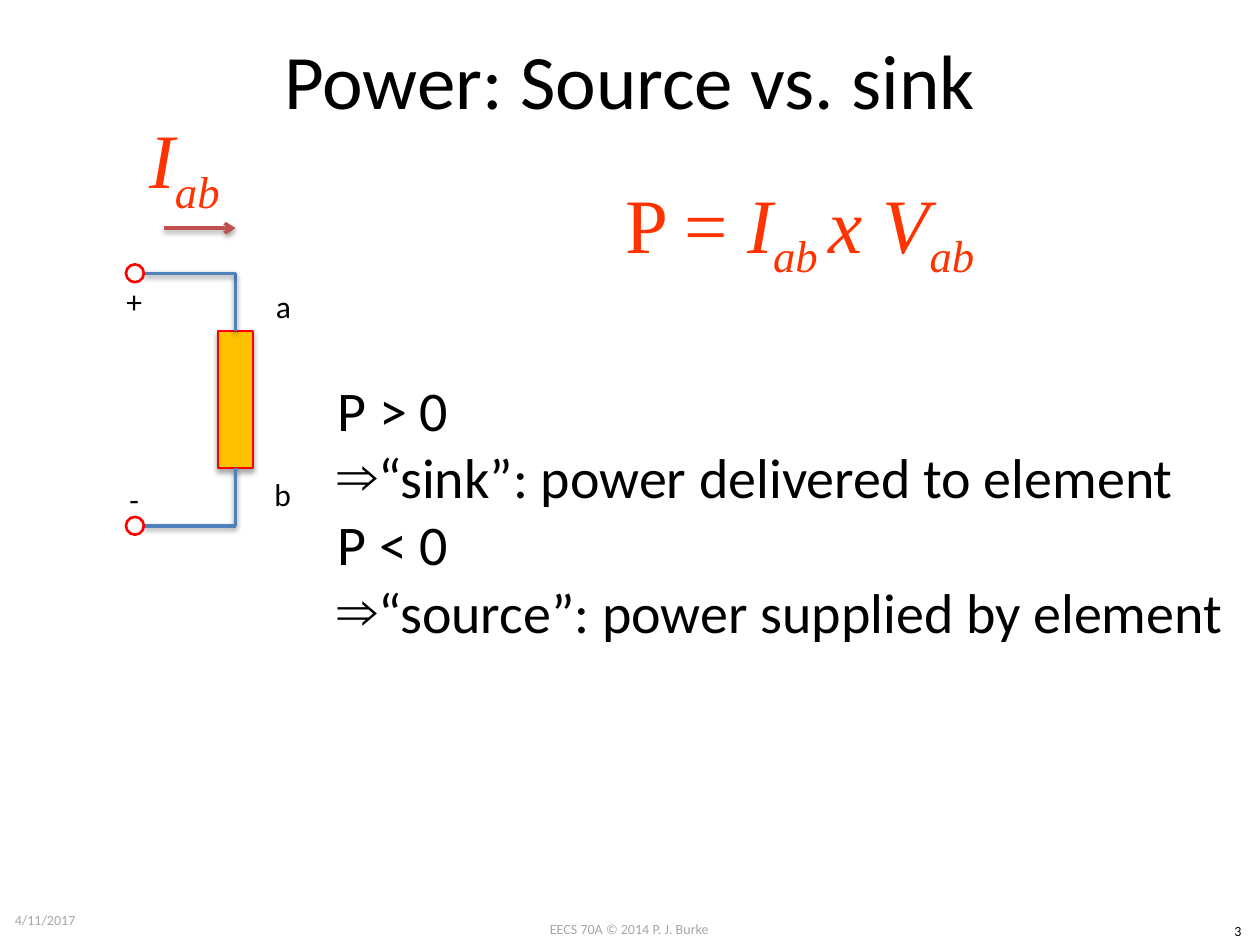
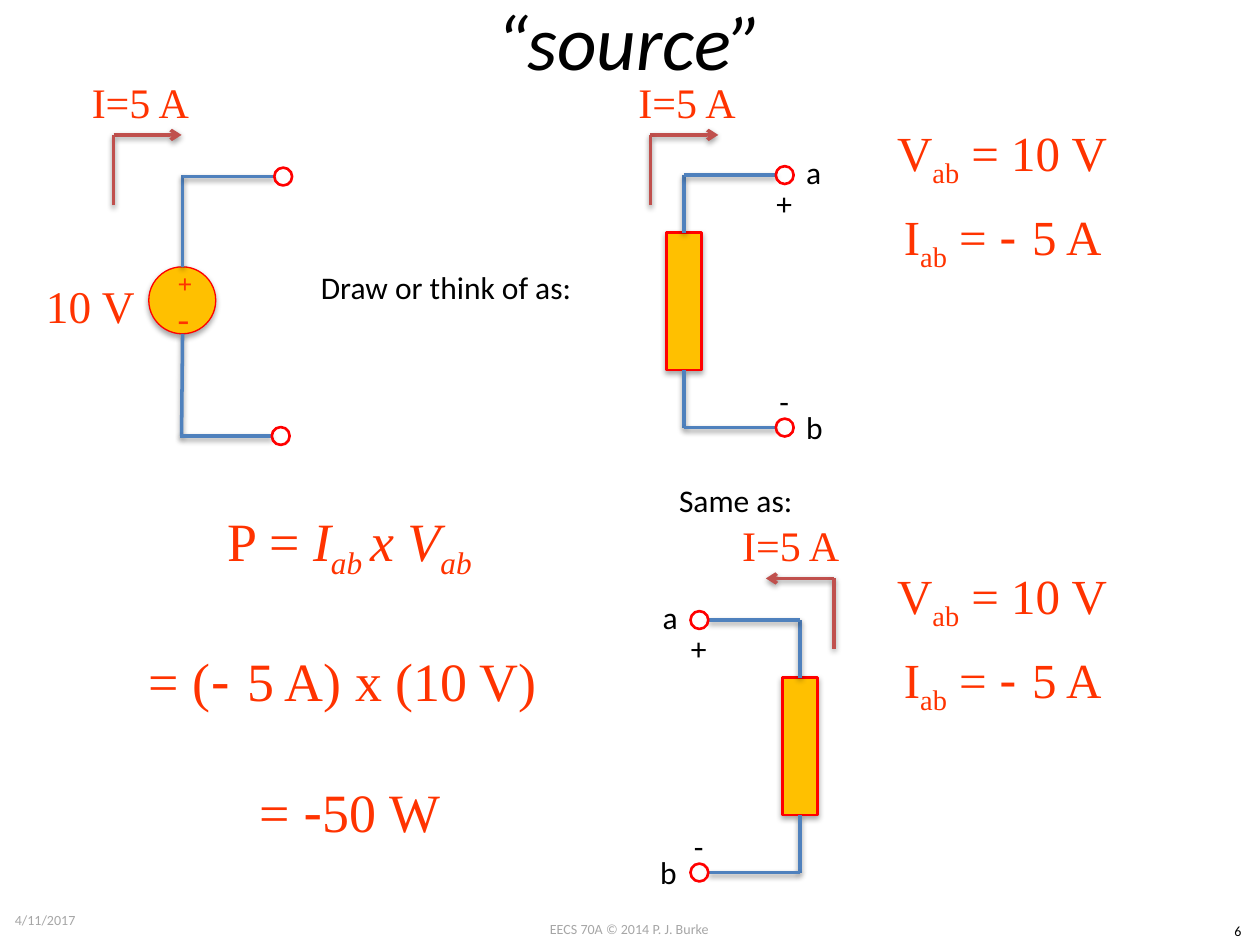
"""Build two circuit slides on power sources and sinks."""
from pptx import Presentation
from pptx import util as u
from pptx.dml.color import RGBColor
from pptx.enum import shapes, text
from pptx.oxml import ns, parse_xml

BLACK = RGBColor(0x00, 0x00, 0x00)
GREY = RGBColor(0xA6, 0xA6, 0xA6)
FORMULA_RED = RGBColor(0xFF, 0x33, 0x00)
OUTLINE_RED = RGBColor(0xFF, 0x00, 0x00)
ARROW_RED = RGBColor(0xC0, 0x50, 0x4D)
WIRE_BLUE = RGBColor(0x4F, 0x81, 0xBD)
ELEMENT_GOLD = RGBColor(0xFF, 0xC0, 0x00)

TITLE = {"name": "Calibri", "size": 44, "rgb": BLACK}
LIST = {"name": "Calibri", "size": 32, "rgb": BLACK}
LABEL = {"name": "Calibri", "size": 18, "rgb": BLACK}
FOOTER = {"name": "Calibri", "size": 8, "rgb": GREY}
FORMULA = {"name": "Times New Roman", "size": 44, "rgb": FORMULA_RED}
ITALIC = {"italic": True}
ITALIC_SUB = {"italic": True, "baseline": "-25000"}
SUB = {"baseline": "-25000"}
MINUS = {"name": "DejaVu Sans"}
POWER = [("P = ", {}), ("I", ITALIC), ("ab ", ITALIC_SUB), ("x V", ITALIC), ("ab", ITALIC_SUB)]

LEFT, CENTER = text.PP_ALIGN.LEFT, text.PP_ALIGN.CENTER
TOP, MIDDLE = text.MSO_ANCHOR.TOP, text.MSO_ANCHOR.MIDDLE

TERMINAL_SIZE = 0.36
LEAD_LENGTH = 1.85
TERMINAL_REACH = LEAD_LENGTH + TERMINAL_SIZE / 2
ELEMENT_WIDTH, ELEMENT_HEIGHT = 0.71, 2.77
CIRCUIT_HEIGHT = 5.09


def set_attributes(target, values):
    """Set each named attribute of the target."""
    for name, value in values.items():
        setattr(target, name, value)


def place(shape, box):
    """Move and size a shape to a box in centimetres."""
    set_attributes(shape, dict(zip(("left", "top", "width", "height"), map(u.Cm, box))))


def add_run(paragraph, words, style):
    """Add a formatted run of text."""
    run = paragraph.add_run()
    run.text = words
    values = dict(style)
    baseline = values.pop("baseline", None)
    run.font.color.rgb = values.pop("rgb")
    values["size"] = u.Pt(values["size"])
    set_attributes(run.font, values)
    if baseline:
        run.font._element.set("baseline", baseline)


def write(frame, lines, style, align=LEFT, gap=0):
    """Fill a text frame with lines, each a string or a list of styled runs."""
    for index, line in enumerate(lines):
        paragraph = frame.add_paragraph() if index else frame.paragraphs[0]
        spacing = u.Pt(gap if index else 0)
        set_attributes(paragraph, {"alignment": align, "space_before": spacing})
        for words, changes in [(line, {})] if isinstance(line, str) else line:
            add_run(paragraph, words, {**style, **changes})


def add_text(slide, box, lines, style, align=CENTER, anchor=MIDDLE, wrap=True, gap=0):
    """Add a text box."""
    shape = slide.shapes.add_textbox(*map(u.Cm, box))
    set_attributes(shape.text_frame, {"word_wrap": wrap, "vertical_anchor": anchor})
    write(shape.text_frame, lines, style, align, gap)


def add_label(slide, left, top, words, width=0.84):
    """Add a small black label."""
    add_text(slide, (left, top, width, 1.02), [words], LABEL, LEFT, TOP, wrap=False)


def add_shadow(shape, alpha, distance):
    """Give a shape a soft shadow below it."""
    shape._element.spPr.append(parse_xml(
        f'<a:effectLst {ns.nsdecls("a")}><a:outerShdw blurRad="40000" dist="{distance}" '
        f'dir="5400000" rotWithShape="0"><a:srgbClr val="000000">'
        f'<a:alpha val="{alpha}"/></a:srgbClr></a:outerShdw></a:effectLst>'))


def add_line(slide, start, end, color=WIRE_BLUE, arrow=False):
    """Add a straight wire or arrow."""
    points = map(u.Cm, (*start, *end))
    line = slide.shapes.add_connector(shapes.MSO_CONNECTOR.STRAIGHT, *points)
    line.line.color.rgb = color
    line.line.width = u.Pt(2)
    if arrow:
        line.line._get_or_add_ln().append(
            parse_xml(f'<a:tailEnd {ns.nsdecls("a")} type="arrow"/>'))
    add_shadow(line, 38000, 20000)


def add_part(slide, kind, box, weight=1.5, filled=True):
    """Add a red-outlined circuit part."""
    shape = slide.shapes.add_shape(kind, *map(u.Cm, box))
    shape.line.color.rgb = OUTLINE_RED
    shape.line.width = u.Pt(weight)
    if filled:
        shape.fill.solid()
        shape.fill.fore_color.rgb = ELEMENT_GOLD
        add_shadow(shape, 35000, 23000)
    else:
        shape.fill.background()
        shape.shadow.inherit = False


def add_lead(slide, wire_x, y, direction):
    """Add a horizontal lead that ends in an open terminal."""
    add_line(slide, (wire_x + direction * LEAD_LENGTH, y), (wire_x, y))
    radius = TERMINAL_SIZE / 2
    center = wire_x + direction * TERMINAL_REACH
    add_part(slide, shapes.MSO_SHAPE.OVAL,
             (center - radius, y - radius, TERMINAL_SIZE, TERMINAL_SIZE), filled=False)


def add_element(slide, wire_x, top, direction):
    """Add a two-terminal element with its leads and polarity signs."""
    bottom = top + CIRCUIT_HEIGHT
    upper = top + (CIRCUIT_HEIGHT - ELEMENT_HEIGHT) / 2
    add_part(slide, shapes.MSO_SHAPE.RECTANGLE,
             (wire_x - ELEMENT_WIDTH / 2, upper, ELEMENT_WIDTH, ELEMENT_HEIGHT))
    for y, edge in ((top, upper), (bottom, upper + ELEMENT_HEIGHT)):
        add_line(slide, (wire_x, y), (wire_x, edge))
        add_lead(slide, wire_x, y, direction)
    terminal = wire_x + direction * TERMINAL_REACH
    add_label(slide, terminal - 0.42, top + 0.05, "+")
    add_label(slide, terminal - 0.36, top + 4.04, "-", 0.71)


def add_voltage_source(slide):
    """Add the round 10 V source with its leads."""
    add_text(slide, (0.64, 5.38, 2.36, 1.57), ["10 V"], {**FORMULA, "size": 25.9}, wrap=False)
    add_part(slide, shapes.MSO_SHAPE.OVAL, (3, 5.38, 1.35, 1.35), 0.75)
    for top, sign, changes in ((5.28, "+", {"size": 14.8, "bold": True}),
                               (5.99, "-", {"size": 20})):
        add_text(slide, (3.33, top, 0.66, 0.84), [sign], {**FORMULA, **changes})
    add_line(slide, (3.66, 8.79), (3.68, 6.73))
    add_line(slide, (3.68, 5.38), (3.68, 3.53))
    add_lead(slide, 3.68, 3.56, 1)
    add_lead(slide, 3.63, 8.79, 1)


def add_current(slide, x, y, direction, label_left):
    """Add a bent current arrow with its value."""
    add_line(slide, (x, y), (x + direction * 1.37, y), ARROW_RED, arrow=True)
    add_line(slide, (x, y + 1.42), (x, y), ARROW_RED)
    add_text(slide, (label_left, y - 1.6, 3.02, 1.85), ["I=5 A"], {**FORMULA, "size": 24})


def add_values(slide, top):
    """Add the voltage and current across a and b."""
    style = {**FORMULA, "size": 28}
    voltage = [("V", {}), ("ab", SUB), (" = 10 V", {})]
    current = [("I", {}), ("ab", SUB), (" = ", {}), ("- ", MINUS), ("5 A", {})]
    add_text(slide, (17.7, top, 5, 1.45), [voltage], style, anchor=TOP)
    add_text(slide, (16.81, top + 1.69, 6.81, 1.45), [current], style, anchor=TOP)


def add_list(slide, box, items):
    """Fill the body placeholder, with arrow bullets on the flagged items."""
    body = slide.placeholders[1]
    place(body, box)
    frame = body.text_frame
    set_attributes(frame, {"word_wrap": False, "auto_size": text.MSO_AUTO_SIZE.NONE})
    write(frame, [words for words, _ in items], LIST)
    for paragraph, (_, arrow) in zip(frame.paragraphs, items):
        properties = paragraph._p.get_or_add_pPr()
        indent = u.Cm(0.8) if arrow else 0
        properties.set("marL", str(indent))
        properties.set("indent", str(-indent))
        bullet = 'buChar char="⇒"' if arrow else "buNone"
        properties.append(parse_xml(f'<a:{bullet} {ns.nsdecls("a")}/>'))


def add_slide(presentation, layout, title, top, number, changes):
    """Add a slide with its title and footers."""
    slide = presentation.slides.add_slide(presentation.slide_layouts[layout])
    place(slide.shapes.title, (1.27, top, 22.86, 3.18))
    slide.shapes.title.text_frame.vertical_anchor = MIDDLE
    write(slide.shapes.title.text_frame, [title], {**TITLE, **changes}, CENTER)
    add_text(slide, (0.05, 18.03, 5.92, 1.02), ["4/11/2017"], FOOTER, LEFT)
    add_text(slide, (9.73, 18.44, 5.92, 0.61), ["EECS 70A © 2014 P. J. Burke"],
             FOOTER, anchor=TOP)
    add_text(slide, (24.51, 18.47, 0.89, 0.61), [number], {**FOOTER, "rgb": BLACK}, anchor=TOP)
    return slide


def build_source_or_sink(presentation):
    """Build the slide that tells a source from a sink."""
    slide = add_slide(presentation, 1, "Power: Source vs. sink", 0, "3", {})
    add_element(slide, 4.75, 5.51, -1)
    add_label(slide, 5.31, 5.66, "a")
    add_label(slide, 5.28, 9.45, "b")
    add_line(slide, (3.3, 4.6), (4.75, 4.6), ARROW_RED, arrow=True)
    add_text(slide, (2.13, 2.03, 3.18, 2.57), [[("I", ITALIC), ("ab", ITALIC_SUB)]], FORMULA)
    add_text(slide, (11.4, 3.33, 9.45, 2.57), [POWER], FORMULA)
    add_list(slide, (6.55, 7.44, 18.85, 5.74), [
        ("P > 0", False),
        ("“sink”: power delivered to element", True),
        ("P < 0", False),
        ("“source”: power supplied by element", True),
    ])


def build_source_example(presentation):
    """Build the worked example of a source."""
    slide = add_slide(presentation, 5, "“source”", -0.79, "6", ITALIC)
    add_voltage_source(slide)
    add_element(slide, 13.79, 3.53, 1)
    add_element(slide, 16.13, 12.5, -1)
    for left, top, words in ((16, 2.97, "a"), (16, 8.1, "b"),
                             (13.11, 11.94, "a"), (13.06, 17.07, "b")):
        add_label(slide, left, top, words)
    add_label(slide, 6.22, 5.28, "Draw or think of as:", 5.61)
    add_label(slide, 13.44, 9.58, "Same as:", 2.82)
    add_current(slide, 2.29, 2.72, 1, 1.32)
    add_current(slide, 13.11, 2.72, 1, 12.34)
    add_current(slide, 16.81, 11.66, -1, 14.43)
    for top in (2.34, 11.28):
        add_values(slide, top)
    product = [("= (", {}), ("- ", MINUS), ("5 A) x (10 V) ", {})]
    result = [("= ", {}), ("-", MINUS), ("50 W", {})]
    add_text(slide, (1.32, 10.7, 11.46, 5.82), [POWER, product, result],
             {**FORMULA, "size": 30.8}, gap=38)


def main():
    """Build and save the presentation."""
    presentation = Presentation()
    set_attributes(presentation, {"slide_width": u.Cm(25.4), "slide_height": u.Cm(19.05)})
    build_source_or_sink(presentation)
    build_source_example(presentation)
    presentation.save("out.pptx")


if __name__ == "__main__":
    main()
